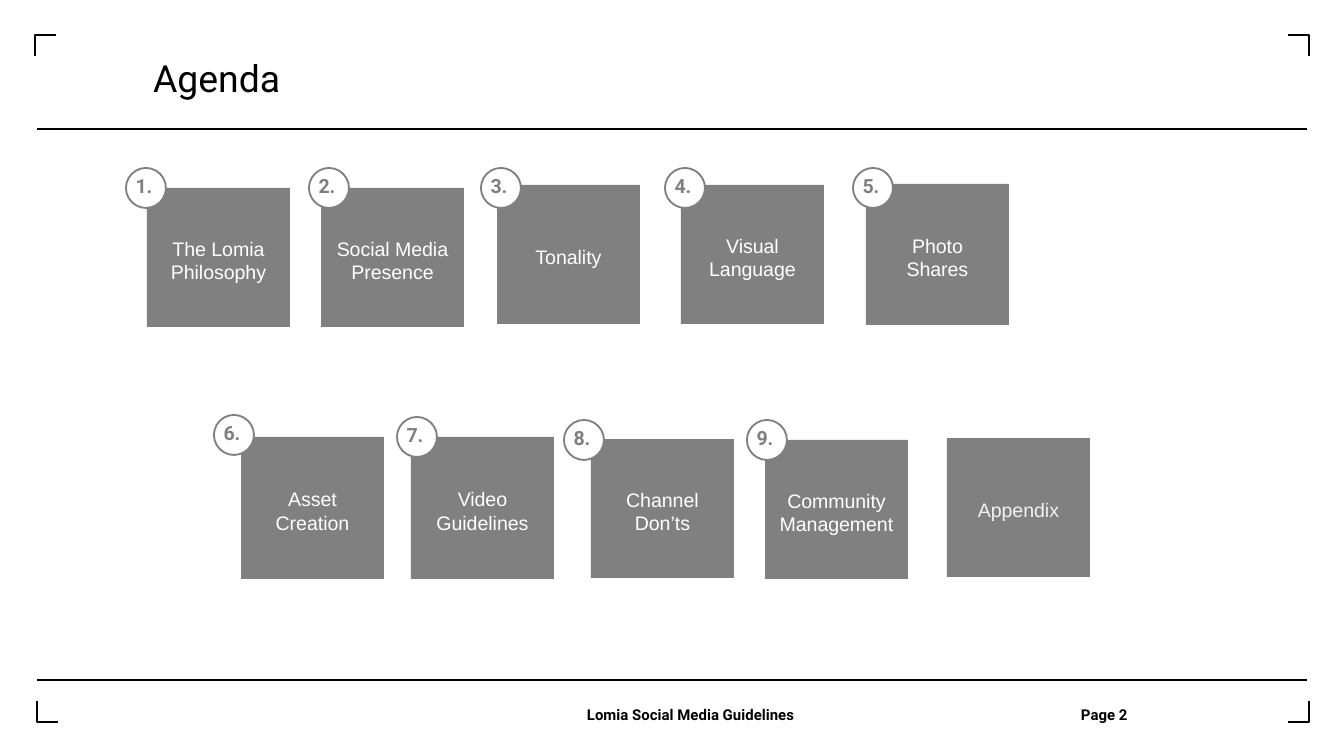
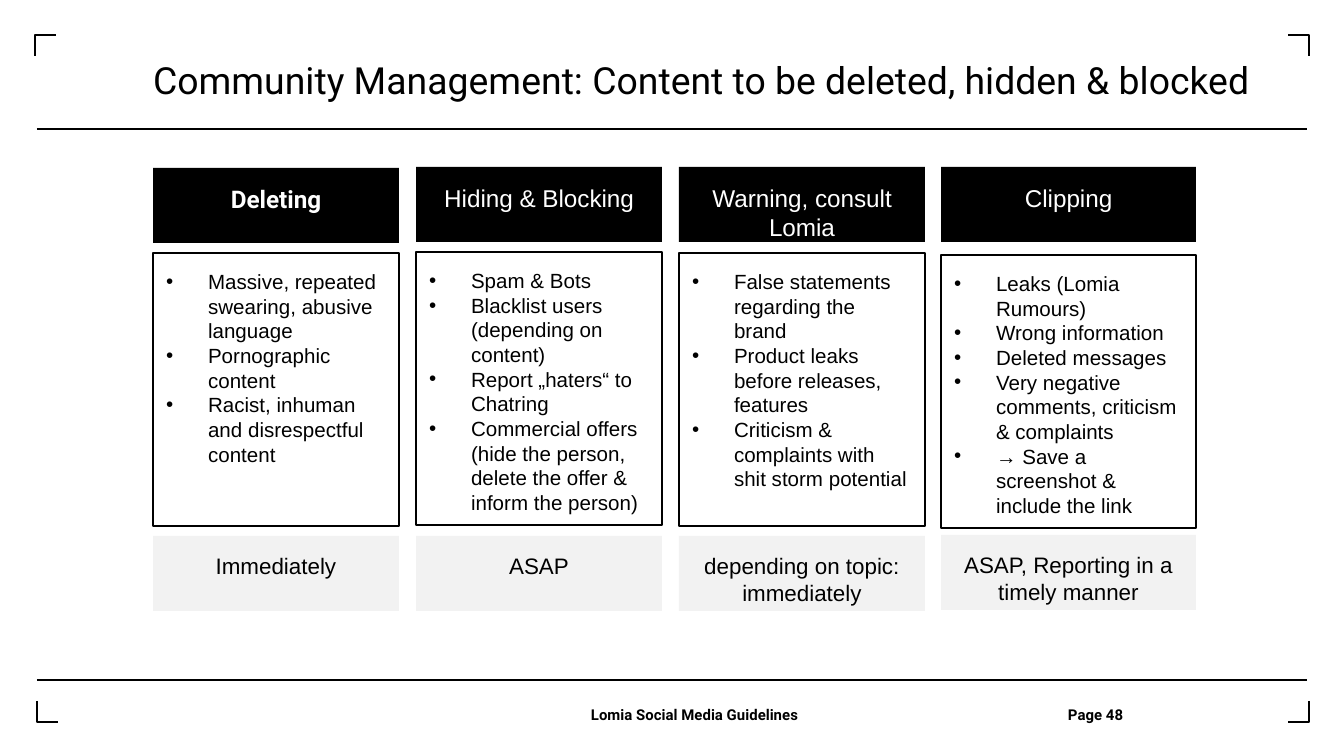
from lxml.etree import SubElement
from pptx import Presentation
from pptx.dml.color import RGBColor
from pptx.enum.shapes import MSO_CONNECTOR, MSO_SHAPE
from pptx.enum.text import MSO_ANCHOR, PP_ALIGN
from pptx.oxml.ns import qn
from pptx.util import Emu, Pt

SCALE = 914400 / 134.4
COLORS = {
    "black": "000000",
    "white": "FFFFFF",
    "gray": "808080",
    "pale": "F2F2F2",
}
SANS = "Arial"
HEAD = "Roboto"
PAD = (13, 16, 13, 11)
FLAT = (0, 0, 0, 0)

TILES = [
    ("The Lomia Philosophy", 147, 188, 139, (126, 168)),
    ("Social Media Presence", 321, 188, 139, (309, 168)),
    ("Tonality", 497, 185, 139, (481, 168)),
    ("Visual Language", 681, 185, 139, (665, 168)),
    ("Photo Shares", 866, 184, 141, (853, 168)),
    ("Asset Creation", 241, 437, 142, (214, 415)),
    ("Video Guidelines", 411, 437, 142, (397, 417)),
    ("Channel Don’ts", 591, 439, 139, (564, 420)),
    ("Community Management", 765, 440, 139, (747, 420)),
]

COLUMNS = [
    (153, 246, (168, 253, 536), "Deleting", HEAD, [
        "Massive, repeated swearing, abusive language",
        "Pornographic content",
        "Racist, inhuman and disrespectful content",
    ], "Immediately"),
    (416, 246, (167, 252, 536), "Hiding & Blocking", SANS, [
        "Spam & Bots",
        "Blacklist users (depending on content)",
        "Report „haters“ to Chatring",
        "Commercial offers (hide the person, delete the offer & inform the person)",
    ], "ASAP"),
    (679, 246, (167, 253, 536), "Warning, consult Lomia", SANS, [
        "False statements regarding the brand",
        "Product leaks before releases, features",
        "Criticism & complaints with shit storm potential",
    ], "depending on topic: immediately"),
    (941, 255, (167, 255, 535), "Clipping", SANS, [
        "Leaks (Lomia Rumours)",
        "Wrong information",
        "Deleted messages",
        "Very negative comments, criticism & complaints",
        "→ Save a screenshot & include the link",
    ], "ASAP, Reporting in a timely manner"),
]


def px(n):
    return Emu(round(n * SCALE))


def rgb(name):
    return RGBColor.from_string(COLORS[name])


def bullet(para):
    props = para._p.get_or_add_pPr()
    props.set("marL", str(px(42)))
    props.set("indent", str(-px(42)))
    SubElement(props, qn("a:buFont")).set("typeface", SANS)
    SubElement(props, qn("a:buChar")).set("char", "•")


def write(shape, lines, size, color, font=SANS, bold=False, pad=FLAT,
          align=PP_ALIGN.CENTER, anchor=MSO_ANCHOR.TOP, lead=None, marks=False):
    frame = shape.text_frame
    frame.word_wrap = True
    frame.vertical_anchor = anchor
    frame.margin_left, frame.margin_top, frame.margin_right, frame.margin_bottom = map(px, pad)
    for i, line in enumerate(lines):
        para = frame.add_paragraph() if i else frame.paragraphs[0]
        para.text = line
        para.alignment = align
        para.line_spacing = Pt(lead or round(size * 1.2, 1))
        if marks:
            bullet(para)
        para.font.name = font
        para.font.size = Pt(size)
        para.font.bold = bold
        para.font.color.rgb = rgb(color)


def block(slide, x, y, w, h, fill, edge=None, kind=MSO_SHAPE.RECTANGLE):
    shape = slide.shapes.add_shape(kind, *map(px, (x, y, w, h)))
    shape.shadow.inherit = False
    shape.fill.solid()
    shape.fill.fore_color.rgb = rgb(fill)
    if edge:
        shape.line.color.rgb = rgb(edge)
        shape.line.width = Pt(1)
    else:
        shape.line.fill.background()
    return shape


def label(slide, x, y, w, h, text, size, **style):
    box = slide.shapes.add_textbox(*map(px, (x, y, w, h)))
    write(box, [text], size, "black", HEAD, align=PP_ALIGN.LEFT, **style)


def rule(slide, y):
    line = slide.shapes.add_connector(
        MSO_CONNECTOR.STRAIGHT, *map(px, (37, y, 1307, y)))
    line.line.color.rgb = rgb("black")
    line.line.width = Pt(0.75)
    SubElement(line._element.spPr, qn("a:effectLst"))


def corner(slide, x, y, dx, dy):
    path = slide.shapes.build_freeform(x, y + dy, scale=SCALE)
    path.add_line_segments([(x, y), (x + dx, y)], close=False)
    shape = path.convert_to_shape()
    shape.shadow.inherit = False
    shape.fill.background()
    shape.line.color.rgb = rgb("black")
    shape.line.width = Pt(0.75)


def page(deck, title, top, name, number):
    slide = deck.slides.add_slide(deck.slide_layouts[6])
    for y in (129, 680):
        rule(slide, y)
    for x, y, dx, dy in ((35, 35, 21, 21), (37, 722, 21, -21),
                         (1309, 35, -21, 21), (1309, 722, -21, -21)):
        corner(slide, x, y, dx, dy)
    label(slide, 153, top, 1107, 71, title, 20, lead=25.5)
    label(slide, name, 706, 260, 18, "Lomia Social Media Guidelines", 8, bold=True)
    label(slide, number[0], 706, 100, 18, number[1], 8, bold=True)
    return slide


def tile(slide, text, x, y, h, color="white"):
    shape = block(slide, x, y, 143, h, "gray")
    write(shape, [text], 10.5, color, pad=PAD, anchor=MSO_ANCHOR.MIDDLE)


def badge(slide, x, y, number):
    shape = block(slide, x, y, 40, 40, "white", "gray", MSO_SHAPE.OVAL)
    write(shape, [f"{number}."], 10.5, "gray", HEAD, True, (0, 0, 4, 0))


def column(slide, x, w, tops, head, font, points, timing):
    top, mid, low = tops
    write(block(slide, x, top, w, 75, "black"), [head], 13, "white",
          font, font == HEAD, PAD)
    write(block(slide, x, mid, w, 273, "white", "black"), points, 11, "black",
          pad=PAD, align=PP_ALIGN.LEFT, marks=True)
    write(block(slide, x, low, w, 75, "pale"), [timing], 12, "black", pad=PAD)


def main():
    deck = Presentation()
    deck.slide_width, deck.slide_height = px(1344), px(756)

    agenda = page(deck, "Agenda", 52, 587, (1081, "Page 2"))
    for number, (text, x, y, h, spot) in enumerate(TILES, 1):
        tile(agenda, text, x, y, h)
        badge(agenda, *spot, number)
    tile(agenda, "Appendix", 947, 438, 139, "pale")

    rules = page(deck, "Community Management: Content to be deleted, hidden & blocked",
                 54, 591, (1068, "Page 48"))
    for item in COLUMNS:
        column(rules, *item)

    deck.save("out.pptx")


if __name__ == "__main__":
    main()
